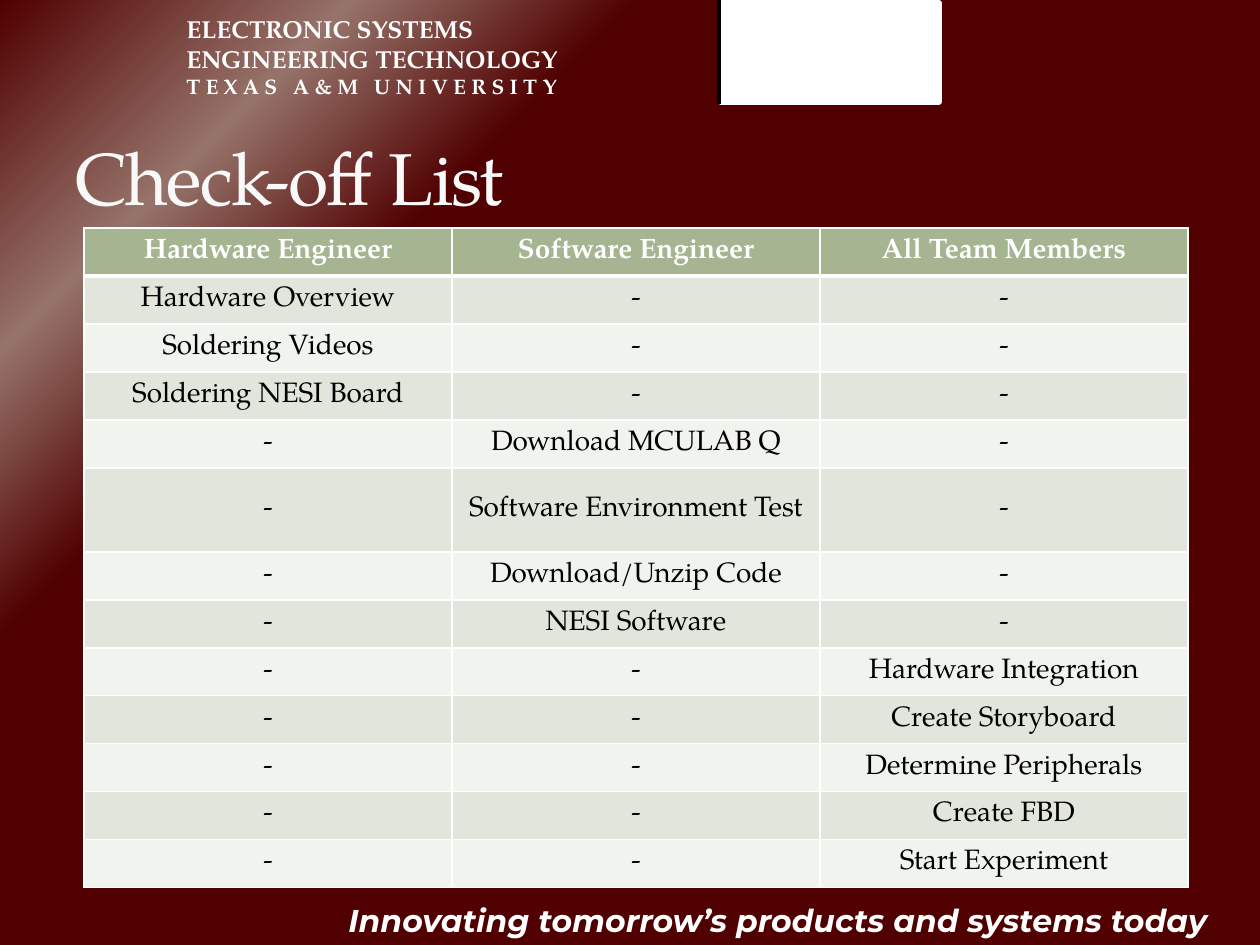
"""Build the check-off list slide with its team task table."""
from typing import Any, NamedTuple

from lxml import etree
from pptx import Presentation
from pptx.dml.color import RGBColor
from pptx.enum.shapes import MSO_CONNECTOR, MSO_SHAPE
from pptx.enum.text import MSO_ANCHOR, MSO_AUTO_SIZE, PP_ALIGN
from pptx.oxml.ns import qn
from pptx.util import Emu, Pt

STRAIGHT = MSO_CONNECTOR.STRAIGHT
RECTANGLE = MSO_SHAPE.RECTANGLE
TOP, MIDDLE = MSO_ANCHOR.TOP, MSO_ANCHOR.MIDDLE
NO_AUTOFIT = MSO_AUTO_SIZE.NONE
LEFT, CENTER = PP_ALIGN.LEFT, PP_ALIGN.CENTER

WHITE = RGBColor(0xFF, 0xFF, 0xFF)
OFF_WHITE = RGBColor(0xF9, 0xF9, 0xF9)
BLACK = RGBColor(0, 0, 0)
MAROON = RGBColor(0x50, 0, 0)
DUSTY_ROSE = RGBColor(0x96, 0x73, 0x6A)
SAGE = RGBColor(0xA5, 0xB5, 0x92)
BANDS = (RGBColor(0xE1, 0xE5, 0xDC), RGBColor(0xF0, 0xF3, 0xEE))

SERIF, SANS = "TeX Gyre Pagella", "Montserrat"
EMU_PER_PX = 914400 / 126
TITLE_ONLY = 5
COLUMN_WIDTH, ROW_HEIGHT, TALL_ROW_HEIGHT = 368, 48, 84
TALL_ROW = 5

GLOW_STOPS = ((0, MAROON), (16, DUSTY_ROSE), (29, MAROON), (100, MAROON))
ROLES = ("Hardware Engineer", "Software Engineer", "All Team Members")


class Box(NamedTuple):
    left: int
    top: int
    width: int
    height: int

    def emu(self) -> list[Emu]:
        return [px(length) for length in self]


class Line(NamedTuple):
    text: str
    font: dict[str, Any]
    spacing: int = 0


class Task(NamedTuple):
    role: int
    name: str


BANNER_FONT = {"name": SERIF, "size": Pt(14), "bold": True}
BANNER = (
    Line("ELECTRONIC SYSTEMS", BANNER_FONT),
    Line("ENGINEERING TECHNOLOGY", BANNER_FONT),
    Line("TEXAS A&M UNIVERSITY", BANNER_FONT | {"size": Pt(12)}, 300),
)
MOTTO = Line(
    "Innovating tomorrow’s products and systems today",
    {"name": SANS, "size": Pt(18), "bold": True, "italic": True},
)
TITLE = Line("Check-off List", {"name": SERIF, "size": Pt(42), "bold": False}, -100)
TASKS = (
    Task(0, "Hardware Overview"),
    Task(0, "Soldering Videos"),
    Task(0, "Soldering NESI Board"),
    Task(1, "Download MCULAB Q"),
    Task(1, "Software Environment Test"),
    Task(1, "Download/Unzip Code"),
    Task(1, "NESI Software"),
    Task(2, "Hardware Integration"),
    Task(2, "Create Storyboard"),
    Task(2, "Determine Peripherals"),
    Task(2, "Create FBD"),
    Task(2, "Start Experiment"),
)


def px(length: int) -> Emu:
    return Emu(round(length * EMU_PER_PX))


def write(frame, lines, color: RGBColor, align=LEFT, anchor=TOP) -> None:
    settings = {"word_wrap": True, "auto_size": NO_AUTOFIT, "vertical_anchor": anchor}
    for key, value in settings.items():
        setattr(frame, key, value)
    for index, line in enumerate(lines):
        paragraph = frame.add_paragraph() if index else frame.paragraphs[0]
        paragraph.alignment = align
        run = paragraph.add_run()
        run.text = line.text
        for key, value in line.font.items():
            setattr(run.font, key, value)
        run.font.color.rgb = color
        if line.spacing:
            run.font._element.set("spc", str(line.spacing))


def add_text(slide, box: Box, lines) -> None:
    write(slide.shapes.add_textbox(*box.emu()).text_frame, lines, WHITE)


def add_color(parent, color: RGBColor) -> None:
    etree.SubElement(parent, qn("a:srgbClr"), val=str(color))


def paint_background(slide) -> None:
    fill = slide.background.fill
    fill.gradient()
    fill.gradient_angle = 315
    stops = slide.background._cSld.find(".//" + qn("a:gsLst"))
    for stop in list(stops):
        stops.remove(stop)
    for percent, color in GLOW_STOPS:
        add_color(etree.SubElement(stops, qn("a:gs"), pos=str(percent * 1000)), color)


def add_emblem_panel(slide) -> None:
    panel = slide.shapes.add_shape(RECTANGLE, *Box(721, 3, 218, 99).emu())
    panel.shadow.inherit = False
    panel.fill.solid()
    panel.fill.fore_color.rgb = WHITE
    panel.line.color.rgb = WHITE
    panel.line.width = Pt(3)
    edge = slide.shapes.add_connector(STRAIGHT, px(719), px(0), px(719), px(104))
    edge.line.color.rgb = BLACK
    edge.line.width = Pt(2)
    etree.SubElement(edge._element.spPr, qn("a:effectLst"))


def style_cell(cell, row: int) -> None:
    properties = cell._tc.get_or_add_tcPr()
    heavy_side = {0: "B", 1: "T"}.get(row)
    for side in "LRTB":
        width = Pt(3 if side == heavy_side else 1)
        border = etree.SubElement(properties, qn(f"a:ln{side}"), w=str(width))
        add_color(etree.SubElement(border, qn("a:solidFill")), WHITE)
    cell.fill.solid()
    cell.fill.fore_color.rgb = BANDS[(row - 1) % 2] if row else SAGE


def add_checklist(slide) -> None:
    rows = [ROLES]
    for task in TASKS:
        rows.append(tuple(task.name if i == task.role else "-" for i in range(len(ROLES))))
    height = ROW_HEIGHT * (len(rows) - 1) + TALL_ROW_HEIGHT
    box = Box(84, 228, COLUMN_WIDTH * len(ROLES), height)
    table = slide.shapes.add_table(len(rows), len(ROLES), *box.emu()).table
    for column in table.columns:
        column.width = px(COLUMN_WIDTH)
    for row, labels in enumerate(rows):
        table.rows[row].height = px(TALL_ROW_HEIGHT if row == TALL_ROW else ROW_HEIGHT)
        font = {"name": SERIF, "size": Pt(16), "bold": row == 0}
        for column, label in enumerate(labels):
            cell = table.cell(row, column)
            style_cell(cell, row)
            cell.vertical_anchor = MIDDLE
            paragraph = cell.text_frame.paragraphs[0]
            paragraph.alignment = CENTER
            run = paragraph.add_run()
            run.text = label
            for key, value in font.items():
                setattr(run.font, key, value)
            run.font.color.rgb = BLACK if row else WHITE


def add_title(slide) -> None:
    title = slide.shapes.title
    title.left, title.top, title.width, title.height = Box(63, 126, 1134, 136).emu()
    write(title.text_frame, [TITLE], OFF_WHITE)


def main() -> None:
    deck = Presentation()
    deck.slide_width, deck.slide_height = px(1260), px(945)
    slide = deck.slides.add_slide(deck.slide_layouts[TITLE_ONLY])
    paint_background(slide)
    add_text(slide, Box(174, 8, 441, 97), BANNER)
    add_text(slide, Box(336, 895, 914, 50), [MOTTO])
    add_emblem_panel(slide)
    add_title(slide)
    add_checklist(slide)
    deck.save("out.pptx")


if __name__ == "__main__":
    main()
